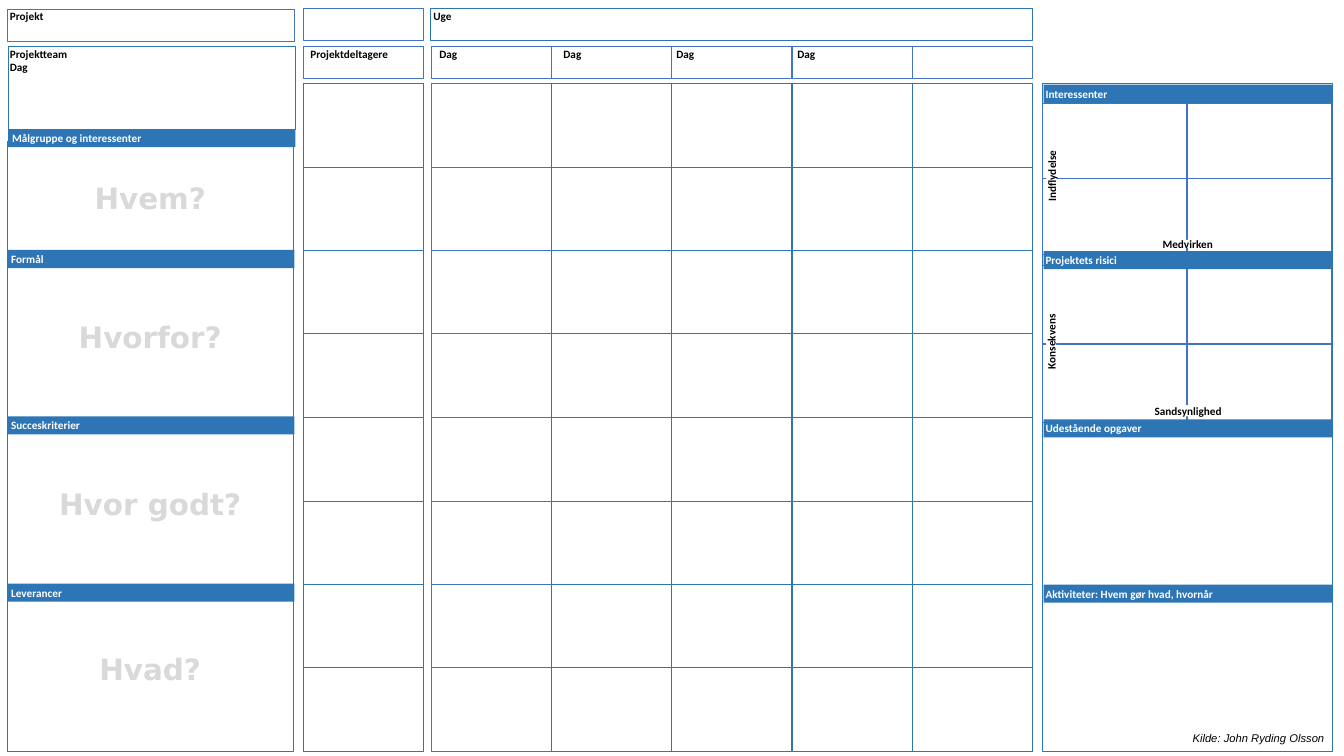
from lxml import etree
from pptx import Presentation
from pptx import util as u
from pptx.dml.color import RGBColor
from pptx.enum import dml, shapes, text
from pptx.oxml import ns

PX = 9144
WHITE = RGBColor(0xFF, 0xFF, 0xFF)
BLACK = RGBColor(0x00, 0x00, 0x00)
GREY = RGBColor(0xD9, 0xD9, 0xD9)
BLUE = RGBColor(0x2E, 0x75, 0xB6)
INDIGO = RGBColor(0x44, 0x72, 0xC4)

COLUMNS = 5
ROWS = 8
COLUMN_PITCH = 119.25
ROW_PITCH = 82.75
CELL_WIDTH = 119
CELL_HEIGHT = 83
GRID_TOP = 83
WEEK_LEFT = 428
MEMBERS_LEFT = 301

QUESTIONS = [
    ("Hvem?", 140, 112),
    ("Hvorfor?", 252, 164),
    ("Hvor godt?", 417, 165),
    ("Hvad?", 582, 163),
]
LEFT_HEADINGS = [
    ("Målgruppe og interessenter", 8, 128),
    ("Formål", 7, 248),
    ("Succeskriterier", 7, 413),
    ("Leverancer", 7, 579),
]
RIGHT_HEADINGS = [
    ("Interessenter", 84),
    ("Projektets risici", 249),
    ("Udestående opgaver", 416),
    ("Aktiviteter: Hvem gør hvad, hvornår", 580),
]
AXIS_LABELS = [
    ("Medvirken", 1099, 238, 158, 8, 0),
    ("Indflydelse", 994, 169, 98, 11, 270),
    ("Konsekvens", 1002, 334, 81, 10, 270),
    ("Sandsynlighed", 1103, 402, 151, 11, 0),
]


def px(length):
    return u.Emu(round(length) * PX)


def add_box(page, left, top, width, height, line=None, fill=WHITE):
    box = page.shapes.add_shape(
        shapes.MSO_SHAPE.RECTANGLE, px(left), px(top), px(width), px(height))
    box.shadow.inherit = False
    if fill is None:
        box.fill.background()
    else:
        box.fill.solid()
        box.fill.fore_color.rgb = fill
    if line is None:
        box.line.fill.background()
    else:
        box.line.color.rgb = line
        box.line.width = u.Pt(0.25)
    return box


def style(para, size, color, font="Calibri", bold=True):
    para.font.size = u.Pt(size)
    para.font.name = font
    para.font.bold = bold
    para.font.color.rgb = color


def write(box, words, size, color, align, side, edge, font="Calibri"):
    frame = box.text_frame
    frame.word_wrap = True
    frame.vertical_anchor = text.MSO_ANCHOR.MIDDLE
    frame.margin_left = frame.margin_right = px(side)
    frame.margin_top = frame.margin_bottom = px(edge)
    para = frame.paragraphs[0]
    para.text = words
    para.alignment = align
    style(para, size, color, font)


def add_heading(page, words, left, top, width, indent):
    box = add_box(page, left, top, width, 18, fill=BLUE)
    write(box, words, 8, WHITE, text.PP_ALIGN.LEFT, indent, 5)


def add_question(page, words, top, height):
    box = add_box(page, 7, top, 284, height, BLUE)
    write(box, words, 21, GREY, text.PP_ALIGN.CENTER, 4, 4, "DejaVu Sans")


def add_axis_label(page, words, left, top, width, height, rotation):
    box = add_box(page, left, top, width, height)
    box.rotation = rotation
    write(box, words, 8, BLACK, text.PP_ALIGN.CENTER, 0, 1)


def add_matrix(page, top, height):
    for row in range(2):
        for column in range(2):
            box = add_box(page, 1034 + 143 * column, top + height * row,
                          143, height, INDIGO, None)
            box.line.dash_style = dml.MSO_LINE.ROUND_DOT


def add_column(page, left, line):
    add_box(page, left, 46, CELL_WIDTH, 32, INDIGO)
    for row in range(ROWS):
        add_box(page, left, GRID_TOP + ROW_PITCH * row,
                CELL_WIDTH, CELL_HEIGHT, line)


def add_label(page, left, top, width, lines):
    label = page.shapes.add_textbox(px(left), px(top), px(width), px(24))
    frame = label.text_frame
    frame.word_wrap = True
    frame.text = "\n".join(lines)
    for para in frame.paragraphs:
        style(para, 8, BLACK)
    return frame


def set_tabs(para, stops):
    properties = para.runs[0].font._element.getparent().getparent().get_or_add_pPr()
    tabs = etree.Element(ns.qn("a:tabLst"))
    for stop in stops:
        etree.SubElement(tabs, ns.qn("a:tab"), pos=str(px(stop)), algn="l")
    properties.insert(0, tabs)


def add_week_plan(page):
    for column in range(COLUMNS):
        add_column(page, WEEK_LEFT + COLUMN_PITCH * column,
                   BLUE if column else INDIGO)
    add_box(page, 427, 8, 597, 32, BLUE)
    add_column(page, MEMBERS_LEFT, BLUE)
    add_box(page, MEMBERS_LEFT, 8, CELL_WIDTH, 32, INDIGO)


def add_right_panel(page):
    add_box(page, 1034, 83, 287, 662, BLUE)
    add_matrix(page, 102, 75)
    add_matrix(page, 263, 78)
    for words, top in RIGHT_HEADINGS:
        add_heading(page, words, 1035, top, 287, 2)
    for label in AXIS_LABELS:
        add_axis_label(page, *label)


def add_left_panel(page):
    add_box(page, 8, 46, 285, 82, BLUE)
    for question in QUESTIONS:
        add_question(page, *question)
    add_box(page, 7, 9, 285, 32, INDIGO)
    for words, left, top in LEFT_HEADINGS:
        add_heading(page, words, left, top, 285, 4)


def add_labels(page):
    title = add_label(page, 0, 4, 470, ["Projekt\tUge"])
    set_tabs(title.paragraphs[0], [420])
    days = "\t".join(["Projektteam", "Projektdeltagere"] + ["Dag"] * 4)
    team = add_label(page, 0, 42, 940, [days, "Dag"])
    set_tabs(team.paragraphs[0], [298, 426, 549, 661, 781])
    source = add_label(page, 1173, 721, 160, ["Kilde: John Ryding Olsson"])
    para = source.paragraphs[0]
    style(para, 8, BLACK, "Arial", False)
    para.font.italic = True


def main():
    deck = Presentation()
    deck.slide_width = px(1333)
    deck.slide_height = px(750)
    page = deck.slides.add_slide(deck.slide_layouts[6])
    add_week_plan(page)
    add_right_panel(page)
    add_left_panel(page)
    add_labels(page)
    deck.save("out.pptx")


if __name__ == "__main__":
    main()
